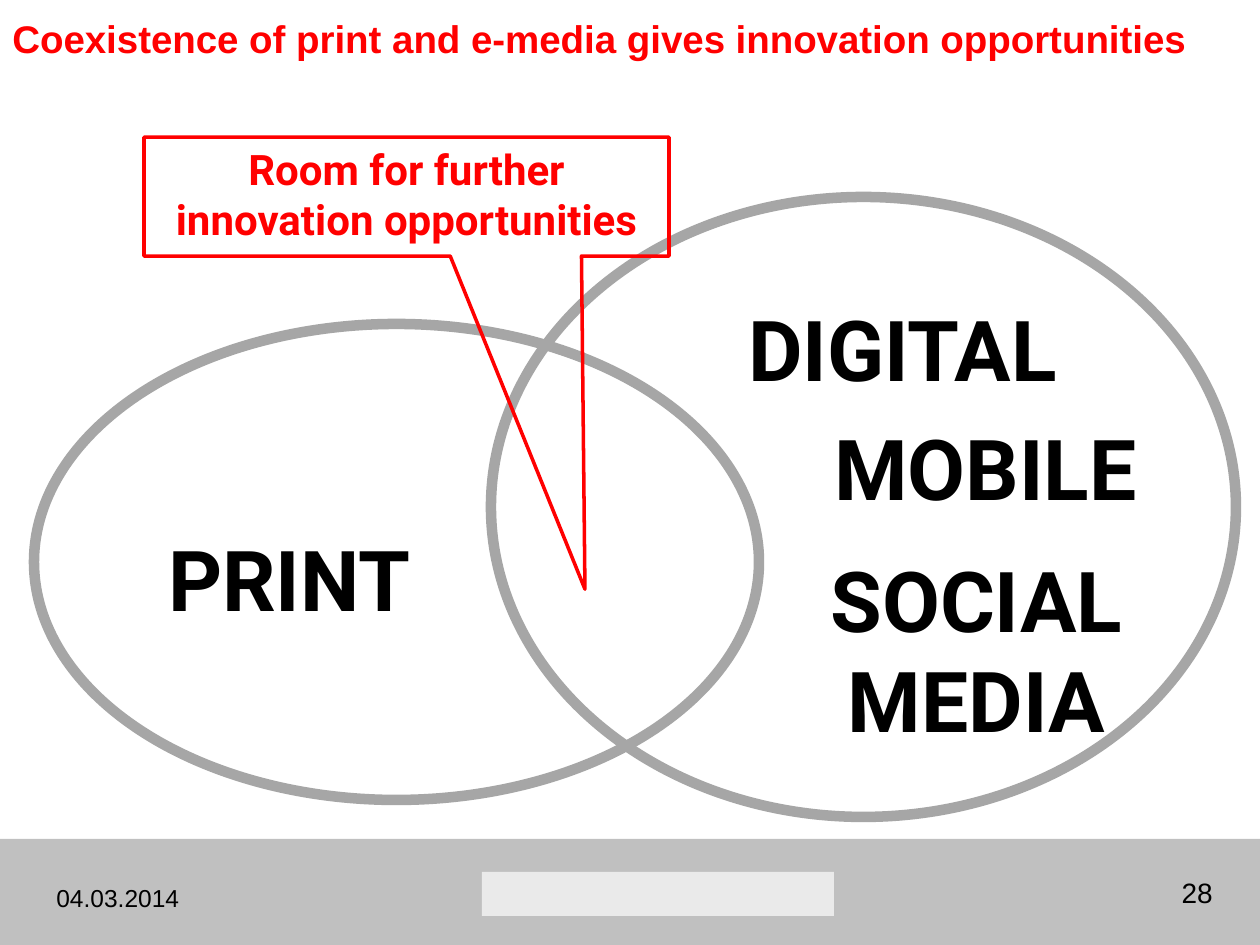
from pptx import Presentation
from pptx.dml.color import RGBColor
from pptx.enum.shapes import MSO_SHAPE
from pptx.enum.text import MSO_AUTO_SIZE, PP_ALIGN
from pptx.util import Pt

RECT, OVAL, CALLOUT = MSO_SHAPE.RECTANGLE, MSO_SHAPE.OVAL, MSO_SHAPE.RECTANGULAR_CALLOUT
LEFT, CENTER, RIGHT = PP_ALIGN.LEFT, PP_ALIGN.CENTER, PP_ALIGN.RIGHT
GROW = MSO_AUTO_SIZE.SHAPE_TO_FIT_TEXT

BLACK = RGBColor(0x00, 0x00, 0x00)
RED = RGBColor(0xFF, 0x00, 0x00)
PALE = RGBColor(0xEA, 0xEA, 0xEA)
SILVER = RGBColor(0xC0, 0xC0, 0xC0)
GREY = RGBColor(0xA6, 0xA6, 0xA6)

PX = 914400 / 126

prs = Presentation()
prs.slide_width, prs.slide_height = round(1260 * PX), round(945 * PX)
slide = prs.slides.add_slide(prs.slide_layouts[6])


def add_shape(kind, box, fill=None, line=None, width=0):
    sp = slide.shapes.add_shape(kind, *[round(v * PX) for v in box])
    sp.shadow.inherit = False
    if fill is None:
        sp.fill.background()
    else:
        sp.fill.solid()
        sp.fill.fore_color.rgb = fill
    if line is None:
        sp.line.fill.background()
    else:
        sp.line.color.rgb = line
        sp.line.width = Pt(width)
    return sp


def add_text(text, box, size, font="Arial", color=BLACK, bold=False, align=LEFT, wrap=True):
    tf = slide.shapes.add_textbox(*[round(v * PX) for v in box]).text_frame
    tf.word_wrap = wrap
    tf.auto_size = GROW
    p = tf.paragraphs[0]
    p.alignment = align
    r = p.add_run()
    r.text = text
    r.font.name = font
    r.font.size = Pt(size)
    r.font.bold = bold
    r.font.color.rgb = color


# Footer, with a plain block in the middle
add_shape(RECT, (0, 839, 1260, 106), fill=SILVER)
add_text("04.03.2014", (44, 877, 149, 43), 14, wrap=False)
add_text("28", (1017, 869, 208, 47), 16, align=RIGHT)
add_shape(RECT, (482, 872, 352, 44), fill=PALE)

# Overlapping media circles
for box in [(34, 324, 725, 476), (491, 197, 745, 620)]:
    add_shape(OVAL, box, line=GREY, width=6)

# Callout pointing at the overlap
callout = add_shape(CALLOUT, (144, 137, 525, 119), line=RED, width=2)
callout.adjustments[0] = 0.34
callout.adjustments[1] = 3.3
add_text("Room for further innovation opportunities", (144, 137, 525, 115), 24,
         font="Roboto", color=RED, bold=True, align=CENTER)

# Media names
for name, box in [
    ("PRINT", (151, 521, 277, 115)),
    ("DIGITAL", (689, 291, 427, 113)),
    ("MOBILE", (808, 410, 355, 115)),
    ("SOCIAL MEDIA", (799, 542, 355, 217)),
]:
    add_text(name, box, 48, font="Roboto", bold=True, align=CENTER)

# Title
add_text("Coexistence of print and e-media gives innovation opportunities", (0, 9, 1260, 59), 22,
         color=RED, bold=True)

prs.save("out.pptx")
